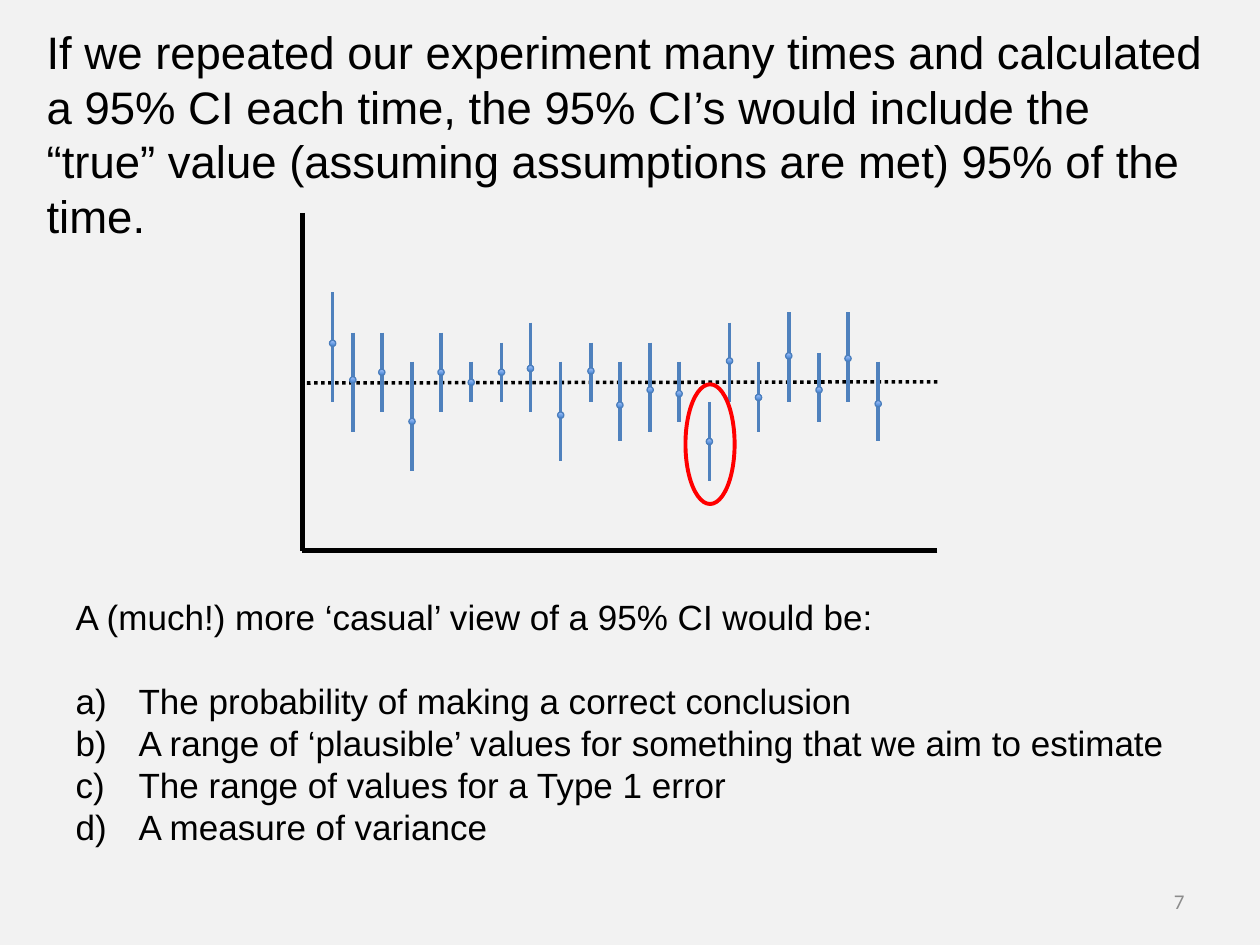
"""Build a slide on how repeated 95% confidence intervals cover the true value."""
from lxml.etree import SubElement
from pptx import Presentation
from pptx.dml.color import RGBColor as Rgb
from pptx.enum.dml import MSO_LINE_DASH_STYLE as Dash
from pptx.enum.shapes import MSO_CONNECTOR as Connector, MSO_SHAPE as Shape
from pptx.enum.text import MSO_ANCHOR as Anchor, MSO_AUTO_SIZE as AutoSize, PP_ALIGN as Align
from pptx.oxml.ns import qn
from pptx.util import Inches, Pt

COLORS = {
    "background": "F2F2F2", "text": "000000", "axis": "000000", "interval": "4F81BD",
    "dot_edge": "4B7EBC", "dot_dark": "3F80CE", "dot_light": "A4C4FF",
    "highlight": "FF0000", "number": "8C8C8C",
}
HEADLINE = ("If we repeated our experiment many times and calculated a 95% CI each time, "
            "the 95% CI’s would include the “true” value (assuming assumptions are met) "
            "95% of the time.")
QUESTION = "A (much!) more ‘casual’ view of a 95% CI would be:"
ANSWERS = [
    "The probability of making a correct conclusion",
    "A range of ‘plausible’ values for something that we aim to estimate",
    "The range of values for a Type 1 error",
    "A measure of variance",
]
# Each interval: x, upper end, lower end, top of its estimate dot.
INTERVALS = [
    (2.64, 2.32, 3.19, 2.7), (2.8, 2.64, 3.43, 2.99), (3.03, 2.64, 3.27, 2.93),
    (3.27, 2.87, 3.74, 3.32), (3.5, 2.64, 3.27, 2.93), (3.74, 2.87, 3.19, 3.01),
    (3.98, 2.72, 3.19, 2.93), (4.21, 2.56, 3.27, 2.9), (4.45, 2.87, 3.66, 3.27),
    (4.69, 2.72, 3.19, 2.92), (4.92, 2.87, 3.5, 3.19), (5.16, 2.72, 3.43, 3.07),
    (5.39, 2.87, 3.35, 3.1), (5.63, 3.19, 3.82, 3.48), (5.79, 2.56, 3.19, 2.84),
    (6.02, 2.87, 3.43, 3.13), (6.26, 2.48, 3.19, 2.8), (6.5, 2.8, 3.35, 3.07),
    (6.73, 2.48, 3.19, 2.82), (6.97, 2.87, 3.5, 3.18),
]
LEFT, RIGHT, TOP, BOTTOM = 2.4, 7.44, 1.69, 4.37
DOT = 0.05


class SlideBuilder:
    """Hold the style and the current slide."""

    def __init__(self, slide):
        self.slide = slide
        self.slide.background.fill.solid()
        self.slide.background.fill.fore_color.rgb = self.color("background")

    def color(self, name):
        """Return a named colour."""
        return Rgb.from_string(COLORS[name])

    def line(self, start, end, color, width, dash=None):
        """Draw a straight line between two points."""
        points = [Inches(value) for value in (*start, *end)]
        line = self.slide.shapes.add_connector(Connector.STRAIGHT, *points)
        line.line.color.rgb = self.color(color)
        line.line.width = Pt(width)
        if dash:
            line.line.dash_style = dash
        SubElement(line._element.spPr, qn("a:effectLst"))

    def ellipse(self, left, top, width, height, edge, weight, stops=None):
        """Draw an ellipse, hollow or with a vertical gradient."""
        frame = [Inches(value) for value in (left, top, width, height)]
        ellipse = self.slide.shapes.add_shape(Shape.OVAL, *frame)
        ellipse.shadow.inherit = False
        ellipse.line.color.rgb = self.color(edge)
        ellipse.line.width = Pt(weight)
        if not stops:
            ellipse.fill.background()
            return
        ellipse.fill.gradient()
        ellipse.fill.gradient_angle = 90
        for position, (stop, name) in enumerate(zip(ellipse.fill.gradient_stops, stops)):
            stop.color.rgb = self.color(name)
            stop.position = position

    def text(self, box, frame, lines, size, font="Arial", color="text",
             anchor=Anchor.MIDDLE, align=Align.LEFT):
        """Place a text shape, fill it and return its paragraphs."""
        box.left, box.top, box.width, box.height = [Inches(value) for value in frame]
        text_frame = box.text_frame
        text_frame.text = "\n".join(lines)
        text_frame.word_wrap = True
        text_frame.auto_size = AutoSize.NONE
        text_frame.vertical_anchor = anchor
        for para in text_frame.paragraphs:
            para.alignment = align
            para.space_before = Pt(0)
            for span in para.runs:
                span.font.name = font
                span.font.size = Pt(size)
                span.font.color.rgb = self.color(color)
        return text_frame.paragraphs

    def letter(self, para):
        """Turn a paragraph into a lettered item with a hanging indent."""
        properties = self.indent(para, 0.5)
        SubElement(properties, qn("a:buFont"), typeface="+mj-lt")
        SubElement(properties, qn("a:buAutoNum"), type="alphaLcParenR")

    def plain(self, para):
        """Remove the bullet and indent of a paragraph."""
        SubElement(self.indent(para, 0), qn("a:buNone"))

    def indent(self, para, inches):
        """Set a hanging indent and return the paragraph properties."""
        properties = para._p.get_or_add_pPr()
        properties.set("marL", str(Inches(inches)))
        properties.set("indent", str(-Inches(inches)))
        return properties


def main():
    """Build and save the deck."""
    deck = Presentation()
    deck.slide_width, deck.slide_height = Inches(10), Inches(7.5)
    slide = deck.slides.add_slide(deck.slide_layouts[1])
    builder = SlideBuilder(slide)

    builder.line((LEFT, TOP), (LEFT, BOTTOM), "axis", 3.25)
    builder.line((RIGHT, BOTTOM), (LEFT, BOTTOM), "axis", 3.25)
    builder.line((RIGHT, 3.03), (LEFT, 3.04), "axis", 2, Dash.ROUND_DOT)
    for x, upper, lower, _ in INTERVALS:
        builder.line((x, upper), (x, lower), "interval", 2)
    for x, _, _, dot_top in INTERVALS:
        builder.ellipse(x - DOT / 2, dot_top, DOT, DOT, "dot_edge", 0.75,
                        ("dot_dark", "dot_light"))
    builder.ellipse(5.44, 3.05, 0.39, 0.95, "highlight", 2.25)

    builder.text(slide.shapes.title, (0.27, 0.14, 9.45, 2.2), [HEADLINE], 26,
                 anchor=Anchor.TOP)
    question, *answers = builder.text(slide.placeholders[1], (0.5, 3.96, 9, 3.53),
                                      [QUESTION, *ANSWERS], 20)
    question.space_after = Pt(24)
    builder.plain(question)
    for answer in answers:
        builder.letter(answer)
    number = slide.shapes.add_textbox(0, 0, 0, 0)
    builder.text(number, (7.17, 6.95, 2.33, 0.4), ["7"], 12, "Calibri", "number",
                 align=Align.RIGHT)
    deck.save("out.pptx")


if __name__ == "__main__":
    main()
